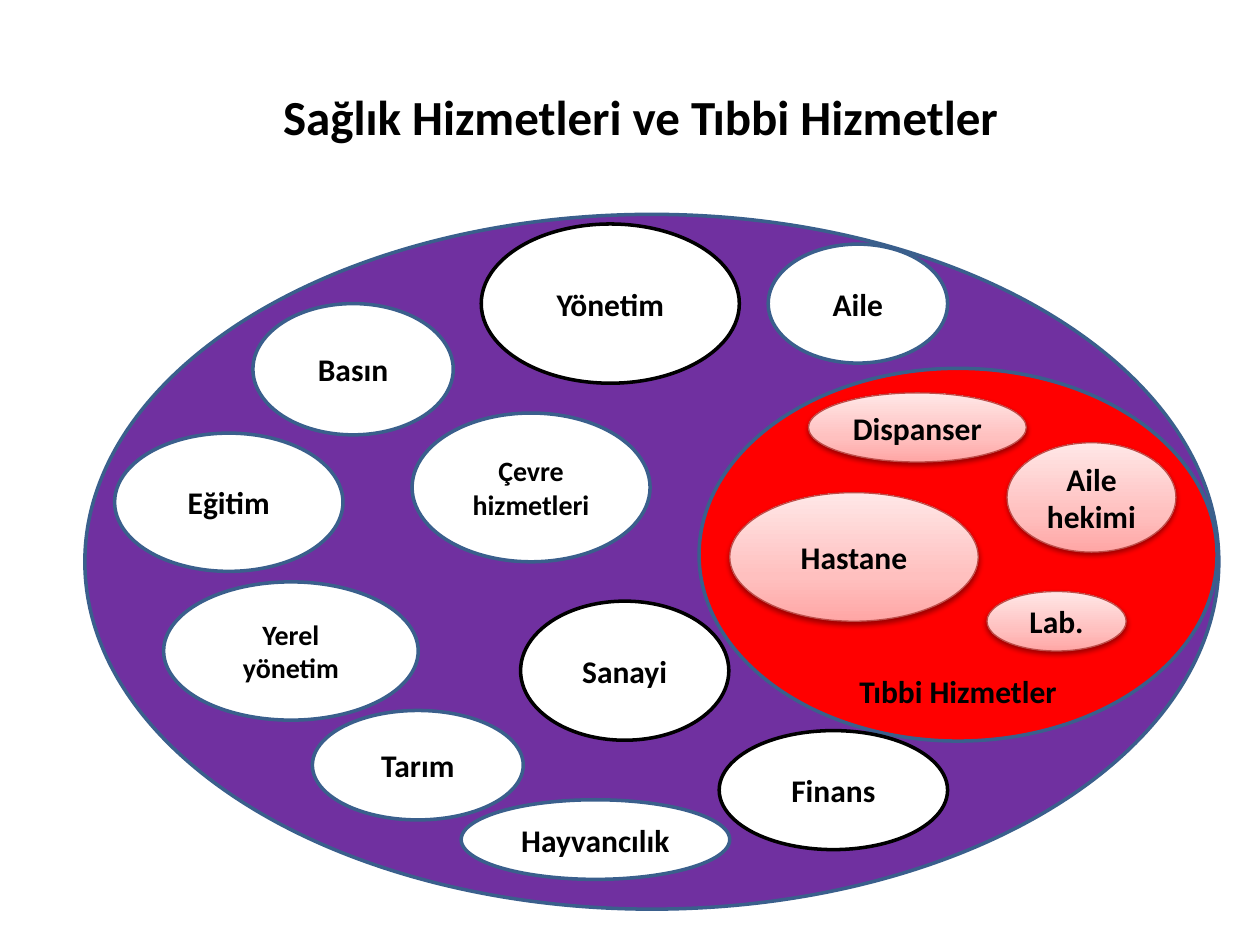
from lxml import etree
from pptx import Presentation
from pptx import util as u
from pptx.dml.color import RGBColor
from pptx.enum import shapes, text
from pptx.oxml import ns, parse_xml

Pt = u.Pt
BLACK = RGBColor(0x00, 0x00, 0x00)
WHITE = RGBColor(0xFF, 0xFF, 0xFF)
PURPLE = RGBColor(0x70, 0x30, 0xA0)
RED = RGBColor(0xFF, 0x00, 0x00)
BLUE = RGBColor(0x3A, 0x5F, 0x8C)
ROSE = RGBColor(0xBF, 0x4C, 0x48)
PINK_STOPS = [(0, RGBColor(0xFF, 0xA6, 0xA5)),
              (35, RGBColor(0xFF, 0xC0, 0xBF)),
              (100, RGBColor(0xFF, 0xE7, 0xE7))]


class Diagram:
    """Holds the text style and the current slide."""

    font_format = {"name": "Calibri", "bold": True}

    def __init__(self, slide):
        self.slide = slide

    def add_words(self, shape, words, size, margin=7.2):
        frame = shape.text_frame
        frame_format = {"word_wrap": True,
                        "vertical_anchor": text.MSO_ANCHOR.MIDDLE,
                        "margin_left": Pt(margin), "margin_right": Pt(margin)}
        for name, value in frame_format.items():
            setattr(frame, name, value)
        paragraph = frame.paragraphs[0]
        paragraph.alignment = text.PP_ALIGN.CENTER
        run = paragraph.add_run()
        run.text = words
        for name, value in {**self.font_format, "size": Pt(size)}.items():
            setattr(run.font, name, value)
        run.font.color.rgb = BLACK

    def label(self, box, words, size):
        self.add_words(self.slide.shapes.add_textbox(*map(Pt, box)), words, size)

    def ellipse(self, box, fill, line, weight=2):
        oval = self.slide.shapes.add_shape(shapes.MSO_SHAPE.OVAL, *map(Pt, box))
        oval.shadow.inherit = False
        oval.fill.solid()
        oval.fill.fore_color.rgb = fill
        oval.line.color.rgb = line
        oval.line.width = Pt(weight)
        return oval

    def sector(self, box, words, line=BLUE, size=18):
        self.add_words(self.ellipse(box, WHITE, line), words, size)

    def medical_unit(self, box, words):
        oval = self.ellipse(box, RED, ROSE, 0.75)
        properties = oval.element.spPr
        # Pink gradient, palest at the top
        stops = "".join(f'<a:gs pos="{pos * 1000}"><a:srgbClr val="{color}"/></a:gs>'
                        for pos, color in PINK_STOPS)
        gradient = parse_xml(f'<a:gradFill {ns.nsdecls("a")}><a:gsLst>{stops}</a:gsLst>'
                             '<a:lin ang="16200000" scaled="0"/></a:gradFill>')
        properties.replace(properties.find(ns.qn("a:solidFill")), gradient)
        # Soft shadow below
        shadow = etree.SubElement(properties.find(ns.qn("a:effectLst")), ns.qn("a:outerShdw"),
                                  blurRad=str(Pt(3.1)), dist=str(Pt(1.6)),
                                  dir="5400000", rotWithShape="0")
        color = etree.SubElement(shadow, ns.qn("a:srgbClr"), val=str(BLACK))
        etree.SubElement(color, ns.qn("a:alpha"), val="38000")
        self.add_words(oval, words, 18, margin=4)


def main():
    deck = Presentation()
    deck.slide_width, deck.slide_height = Pt(720), Pt(540)
    diagram = Diagram(deck.slides.add_slide(deck.slide_layouts[6]))

    # Title
    diagram.label((42, 21, 648, 90), "Sağlık Hizmetleri ve Tıbbi Hizmetler", 28)

    # Health services, with medical services inside
    diagram.ellipse((48.5, 122.5, 648, 397), PURPLE, BLUE)
    diagram.ellipse((399.5, 210.5, 296, 213), RED, BLUE)
    diagram.label((475, 381, 145, 27), "Tıbbi Hizmetler", 18)

    # Sectors outlined in blue
    for box, words, size in [
        ((65.5, 247.5, 130.5, 79), "Eğitim", 18),
        ((93.5, 332.5, 145.5, 79), "Yerel yönetim", 16),
        ((144.5, 173.5, 114.5, 75), "Basın", 18),
        ((178.5, 406, 120.5, 62.5), "Tarım", 18),
        ((235.5, 236, 136, 85), "Çevre hizmetleri", 16),
        ((439, 139.5, 102.5, 68), "Aile", 18),
        ((263.5, 457, 153.5, 45.5), "Hayvancılık", 18),
    ]:
        diagram.sector(box, words, size=size)

    # Sectors outlined in black
    for box, words in [
        ((275, 128, 147.5, 91), "Yönetim"),
        ((297.5, 343.5, 119, 79.5), "Sanayi"),
        ((411, 417.5, 130.5, 68), "Finans"),
    ]:
        diagram.sector(box, words, BLACK)

    # Medical units
    for box, words in [
        ((417, 281.5, 142, 73.5), "Hastane"),
        ((575.5, 253, 96.5, 62.5), "Aile hekimi"),
        ((462, 224.5, 124.5, 39.5), "Dispanser"),
        ((564, 338, 79.5, 34), "Lab."),
    ]:
        diagram.medical_unit(box, words)

    deck.save("out.pptx")


if __name__ == "__main__":
    main()
